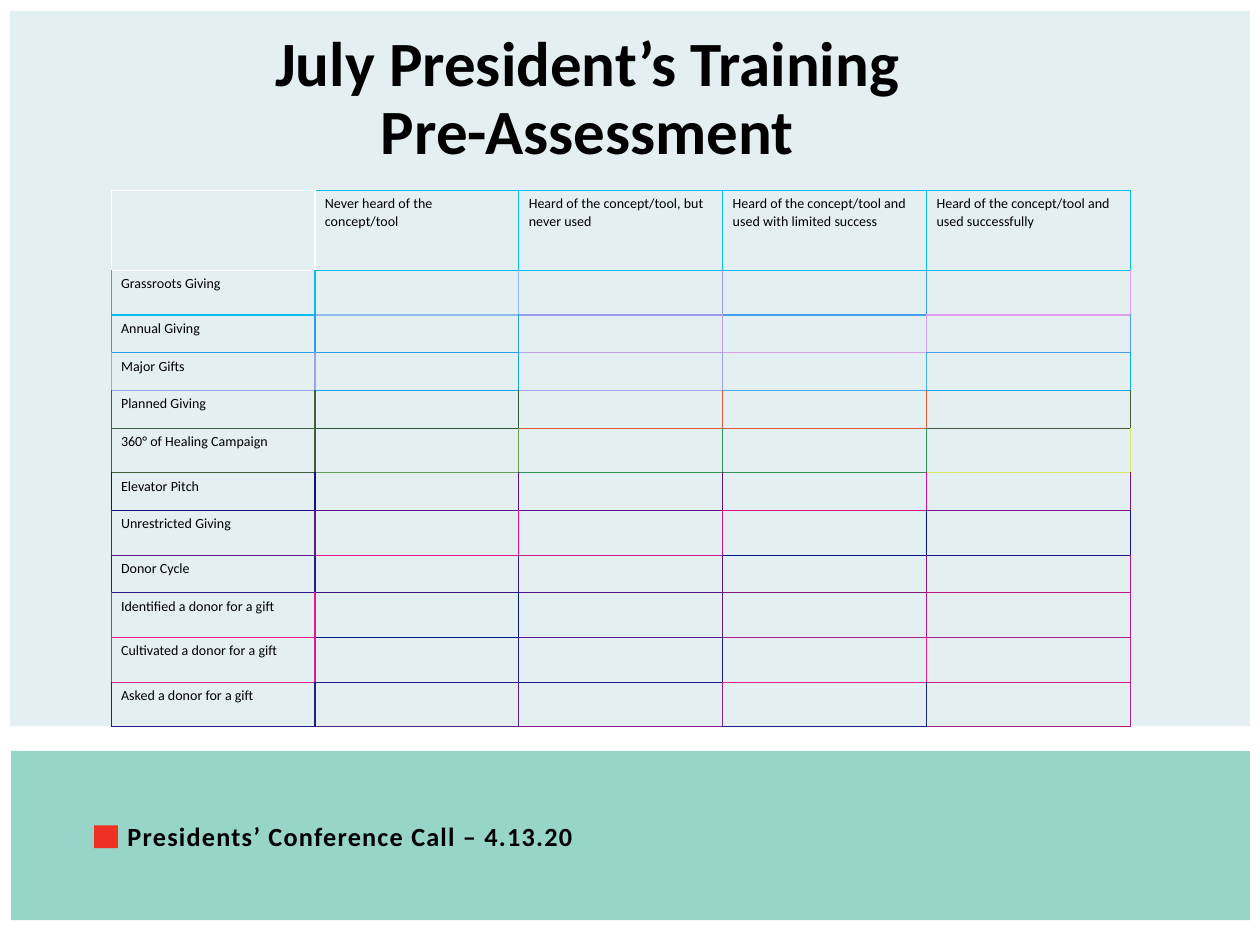
from dataclasses import dataclass

from lxml.etree import SubElement
from pptx import Presentation
from pptx.dml.color import RGBColor
from pptx.enum.shapes import MSO_SHAPE
from pptx.enum.text import MSO_ANCHOR, MSO_AUTO_SIZE, PP_ALIGN
from pptx.oxml.ns import qn
from pptx.util import Cm, Pt


@dataclass(frozen=True)
class Theme:
    font: str = "Calibri"
    ink: str = "000000"
    panel: str = "E4EFF1"
    band: str = "97D5C9"
    marker: str = "EE3124"
    title_size: int = 36
    label_size: int = 15
    table_size: int = 8
    border_width: float = 0.75
    border_rows: tuple = (
        "FFFFFF 08BCED 08BCED 08BCED 08BCED",
        "08BCED 90BBED 989EED 409FED E09EED",
        "289FED 289FED C0A0ED D8A0ED 48A0ED",
        "98A4ED 18A3ED A0A5ED 40AEED 08AAED",
        "405F3C 285C3C E05B3C E05B3C 405C3C",
        "405C3C 68A055 309655 309655 D8E85B",
        "101087 601487 601487 D81187 801287",
        "601787 E01587 D01687 001787 181787",
        "281987 381887 501887 881987 B81987",
        "E81987 001A87 581C87 B01B87 B01B87",
        "E01B87 281C87 201E87 F81E87 D01F87",
        "201E87 581F87 882287 182387 B02187",
    )


theme = Theme()


def add_span(para, text, size, bold=False):
    span = para.add_run()
    span.text = text
    span.font.name = theme.font
    span.font.size = Pt(size)
    span.font.bold = bold
    span.font.color.rgb = RGBColor.from_string(theme.ink)
    return span


def set_borders(cell, left, right, top, bottom):
    properties = cell._tc.get_or_add_tcPr()
    for side, color in zip("LRTB", (left, right, top, bottom)):
        line = SubElement(properties, qn(f"a:ln{side}"), w=str(Pt(theme.border_width)))
        fill = SubElement(line, qn("a:solidFill"))
        SubElement(fill, qn("a:srgbClr"), val=color)


deck = Presentation()
deck.slide_width = Cm(25.4)
deck.slide_height = Cm(19.05)
page = deck.slides.add_slide(deck.slide_layouts[5])

for left, top, width, height, color in (
    (0.22, 15.14, 24.98, 3.41, theme.band),
    (0.2, 0.22, 25, 14.42, theme.panel),
    (1.9, 16.64, 0.48, 0.46, theme.marker),
):
    block = page.shapes.add_shape(MSO_SHAPE.RECTANGLE, Cm(left), Cm(top), Cm(width), Cm(height))
    block.shadow.inherit = False
    block.fill.solid()
    block.fill.fore_color.rgb = RGBColor.from_string(color)
    block.line.fill.background()

title = page.shapes.title
page.shapes._spTree.append(title._element)
title.left, title.top, title.width, title.height = Cm(0.89), Cm(0.58), Cm(21.9), Cm(2.87)
title.text_frame.word_wrap = True
title.text_frame.auto_size = MSO_AUTO_SIZE.NONE
title.text_frame.vertical_anchor = MSO_ANCHOR.MIDDLE
para = title.text_frame.paragraphs[0]
para.alignment = PP_ALIGN.CENTER
para.line_spacing = 0.9
add_span(para, "July President’s Training", theme.title_size, True)
para.add_line_break()
add_span(para, "Pre-Assessment", theme.title_size, True)

headings = (
    "",
    "Never heard of the concept/tool",
    "Heard of the concept/tool, but never used",
    "Heard of the concept/tool and used with limited success",
    "Heard of the concept/tool and used successfully",
)
tall, short = 0.9, 0.76
topics = (
    ("Grassroots Giving", tall),
    ("Annual Giving", short),
    ("Major Gifts", short),
    ("Planned Giving", short),
    ("360° of Healing Campaign", tall),
    ("Elevator Pitch", short),
    ("Unrestricted Giving", tall),
    ("Donor Cycle", short),
    ("Identified a donor for a gift", tall),
    ("Cultivated a donor for a gift", tall),
    ("Asked a donor for a gift", tall),
)
rows = [headings] + [(topic, "", "", "", "") for topic, height in topics]
heights = [1.61] + [height for topic, height in topics]
colors = [row.split() for row in theme.border_rows]

frame = page.shapes.add_table(
    len(rows), len(headings), Cm(2.24), Cm(3.84), Cm(20.57), Cm(sum(heights))
)
table = frame.table
table.first_row = False
table.horz_banding = False
for column in table.columns:
    column.width = Cm(4.11)
for row, height in zip(table.rows, heights):
    row.height = Cm(height)

for row_index, texts in enumerate(rows):
    for column_index, text in enumerate(texts):
        cell = table.cell(row_index, column_index)
        cell.margin_left = cell.margin_right = Cm(0.2)
        cell.margin_top = cell.margin_bottom = Cm(0.1)
        color = colors[row_index][column_index]
        left = colors[row_index][max(column_index - 1, 0)]
        top = colors[max(row_index - 1, 0)][column_index]
        set_borders(cell, left, color, top, color)
        cell.fill.background()
        para = cell.text_frame.paragraphs[0]
        if text:
            add_span(para, text, theme.table_size)
        else:
            SubElement(para._p, qn("a:endParaRPr"), sz=str(theme.table_size * 100))

box = page.shapes.add_textbox(Cm(2.57), Cm(16.54), Cm(10.29), Cm(1.27))
label = box.text_frame
label.word_wrap = True
label.margin_left = label.margin_right = label.margin_top = label.margin_bottom = 0
span = add_span(label.paragraphs[0], "Presidents’ Conference Call – 4.13.20", theme.label_size, True)
span.font._element.set("spc", "70")

deck.save("out.pptx")
